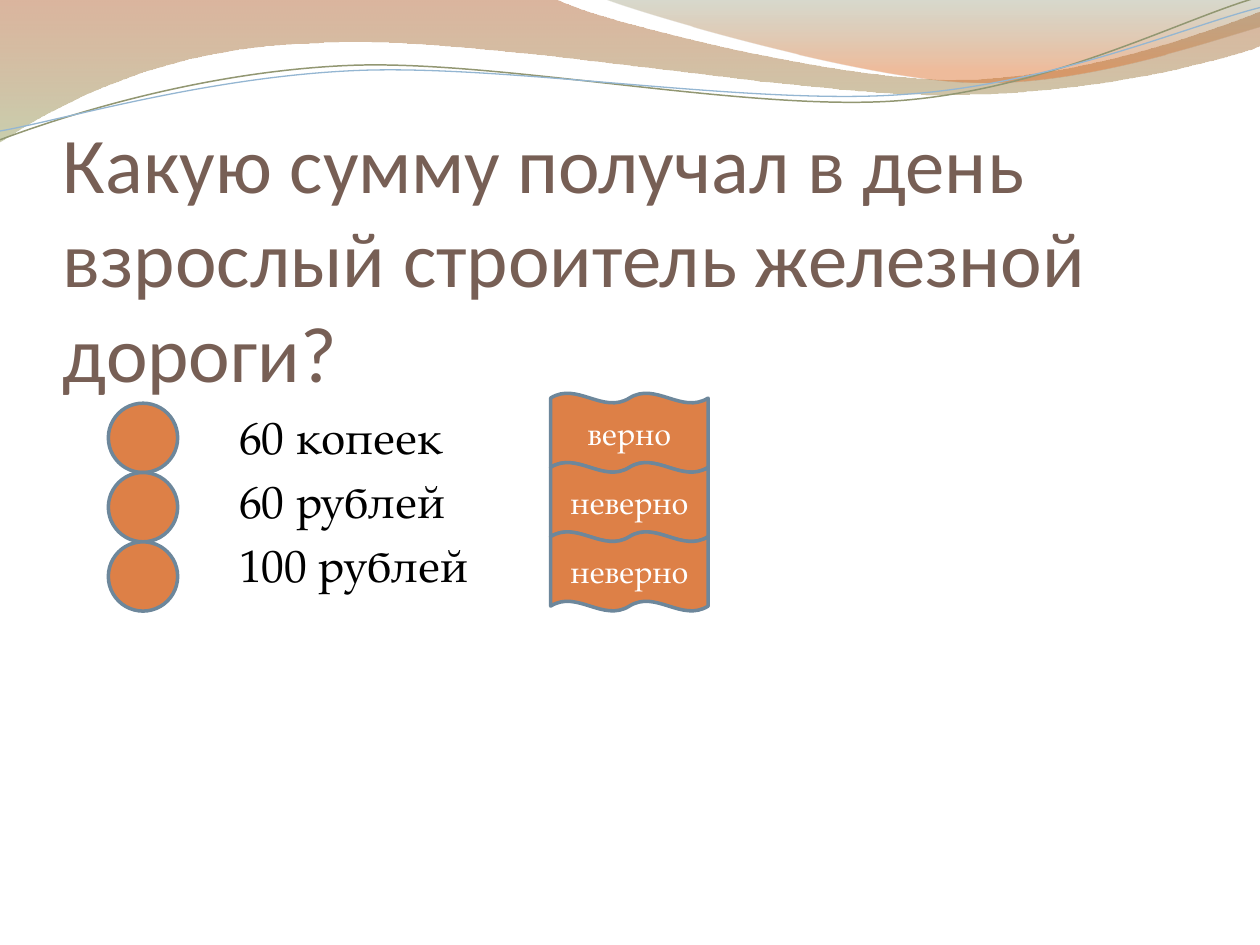
import pptx
import pptx.util
import pptx.dml.color
import pptx.enum.shapes
import pptx.enum.text
from lxml import etree

Inches, Pt = pptx.util.Inches, pptx.util.Pt
RGB = pptx.dml.color.RGBColor
SHAPES = pptx.enum.shapes.MSO_SHAPE
ALIGN, ANCHOR = pptx.enum.text.PP_ALIGN, pptx.enum.text.MSO_ANCHOR
DRAWING_NS = "{http://schemas.openxmlformats.org/drawingml/2006/main}"

SLIDE_W, SLIDE_H = 10, 7.5
MARGIN = 0.05 * SLIDE_W
CONTENT_W = 0.9 * SLIDE_W
ROW_TOP, ROW_STEP = 3.2, 0.55
MARK_LEFT, VERDICT_LEFT = 0.86, 4.37
VERDICT_W, VERDICT_H, VERDICT_RISE = 1.25, 0.63, 0.08
ANSWER_INDENT = 1.3

TITLE_FONT, BODY_FONT = "Calibri", "TeX Gyre Pagella"
BROWN = RGB(0x77, 0x5F, 0x55)
BLACK = RGB(0, 0, 0)
WHITE = RGB(0xFF, 0xFF, 0xFF)
ORANGE = RGB(0xDD, 0x80, 0x47)
SLATE = RGB(0x6D, 0x87, 0x9B)
RUST = RGB(0xAF, 0x5C, 0x29)
SAGE = RGB(0x9D, 0xA6, 0x6B)
MOSS = RGB(0x7D, 0x83, 0x5B)
FLAME = RGB(0xDD, 0x6B, 0x24)
OLIVE = RGB(0x92, 0x97, 0x72)
SKY = RGB(0x94, 0xB6, 0xD2)

QUESTION = "Какую сумму получал в день взрослый строитель железной дороги?"
ANSWERS = [("60 копеек", "верно"), ("60 рублей", "неверно"), ("100 рублей", "неверно")]

# Each step is a point (x, y) or a cubic curve (x1, y1, x2, y2, x, y),
# in hundredths of an inch.
WIDE_WAVE = [
    (0, 0), (440, -1),
    (476, 17, 664, 63, 758, 63), (853, 63, 958, 26, 1000, 9),
    (1001, 36),
    (983, 44, 870, 76, 746, 75), (622, 75, 382, 28, 257, 34),
    (129, 36, 46, 83, -1, 113),
]
CORNER_WAVE = [
    (479, -1),
    (509, 11, 682, 62, 769, 65), (856, 69, 961, 32, 1000, 21),
    (1000, 0),
]
OLIVE_STRAND = [
    (0, 111), (48, 93, 158, 57, 277, 52),
    (395, 47, 593, 89, 713, 80), (833, 71, 938, 15, 998, -2),
]
SKY_STRAND = [
    (0, 104), (47, 96, 164, 61, 283, 56),
    (403, 51, 597, 84, 717, 75), (836, 67, 941, 21, 1000, 6),
]


def add_outline(slide, steps, close):
    """Draw the steps as line segments, then join each curve's three into one."""
    builder = slide.shapes.build_freeform(*steps[0], scale=Inches(0.01))
    for step in steps[1:]:
        builder.add_line_segments(list(zip(step[::2], step[1::2])), close=False)
    if close:
        builder.add_line_segments([steps[0]], close=True)
    outline = builder.convert_to_shape()
    outline.shadow.inherit = False

    segments = iter(list(outline.element.spPr.iter(DRAWING_NS + "lnTo")))
    for step in steps[1:]:
        first = next(segments)
        if len(step) == 6:
            curve = etree.Element(DRAWING_NS + "cubicBezTo")
            first.addprevious(curve)
            for segment in (first, next(segments), next(segments)):
                curve.append(segment[0])
                segment.getparent().remove(segment)
    return outline


def add_wave(slide, steps, stops):
    """Add a see-through wave; stops are (position, colour, opacity in percent)."""
    wave = add_outline(slide, steps, close=True)
    wave.line.fill.background()
    wave.fill.gradient()
    wave.fill.gradient_angle = 270
    for stop, (position, colour, _) in zip(wave.fill.gradient_stops, stops):
        stop.position = position
        stop.color.rgb = colour
    colours = wave.element.spPr.iter(DRAWING_NS + "srgbClr")
    for colour, (_, _, opacity) in zip(list(colours), stops):
        etree.SubElement(colour, DRAWING_NS + "alpha", val=str(opacity * 1000))


def add_strand(slide, steps, colour, width):
    strand = add_outline(slide, steps, close=False)
    strand.fill.background()
    strand.line.color.rgb = colour
    strand.line.width = Pt(width)


def write(frame, lines, *, font, size, colour, align=ALIGN.LEFT,
          anchor=ANCHOR.TOP, space_before=0, indent=0):
    frame.word_wrap = True
    frame.vertical_anchor = anchor
    for i, line in enumerate(lines):
        paragraph = frame.add_paragraph() if i else frame.paragraphs[0]
        paragraph.alignment = align
        paragraph.space_before = Pt(space_before)
        if indent:
            paragraph._p.get_or_add_pPr().set("marL", str(Inches(indent)))
        run = paragraph.add_run()
        run.text = line
        run.font.name = font
        run.font.size = Pt(size)
        run.font.color.rgb = colour


def add_text_area(slide, top, height):
    area = slide.shapes.add_textbox(*map(Inches, (MARGIN, top, CONTENT_W, height)))
    return area.text_frame


def add_button(slide, kind, left, top, width, height):
    button = slide.shapes.add_shape(kind, *map(Inches, (left, top, width, height)))
    button.shadow.inherit = False
    button.fill.solid()
    button.fill.fore_color.rgb = ORANGE
    button.line.color.rgb = SLATE
    button.line.width = Pt(2)
    return button


def add_header_waves(slide):
    add_wave(slide, WIDE_WAVE, [(0, RUST, 45), (1, SAGE, 55)])
    add_wave(slide, CORNER_WAVE, [(0, MOSS, 30), (0.8, FLAME, 45)])
    add_strand(slide, OLIVE_STRAND, OLIVE, 0.85)
    add_strand(slide, SKY_STRAND, SKY, 0.75)


def add_question(slide):
    frame = add_text_area(slide, 0.31, 2.85)
    frame.margin_left = frame.margin_right = frame.margin_bottom = 0
    write(frame, [QUESTION], font=TITLE_FONT, size=45, colour=BROWN,
          anchor=ANCHOR.BOTTOM)


def add_answers(slide):
    write(add_text_area(slide, ROW_TOP, 3.5), [answer for answer, _ in ANSWERS],
          font=BODY_FONT, size=26, colour=BLACK, space_before=5.2,
          indent=ANSWER_INDENT)
    row_tops = [ROW_TOP + row * ROW_STEP for row in range(len(ANSWERS))]
    for top in row_tops:
        add_button(slide, SHAPES.OVAL, MARK_LEFT, top, ROW_STEP, ROW_STEP)
    for top, (_, verdict) in zip(row_tops, ANSWERS):
        banner = add_button(slide, SHAPES.DOUBLE_WAVE, VERDICT_LEFT,
                            top - VERDICT_RISE, VERDICT_W, VERDICT_H)
        write(banner.text_frame, [verdict], font=BODY_FONT, size=18, colour=WHITE,
              align=ALIGN.CENTER, anchor=ANCHOR.MIDDLE)


def main():
    deck = pptx.Presentation()
    deck.slide_width, deck.slide_height = Inches(SLIDE_W), Inches(SLIDE_H)
    slide = deck.slides.add_slide(deck.slide_layouts[6])
    add_header_waves(slide)
    add_question(slide)
    add_answers(slide)
    deck.save("out.pptx")


if __name__ == "__main__":
    main()
